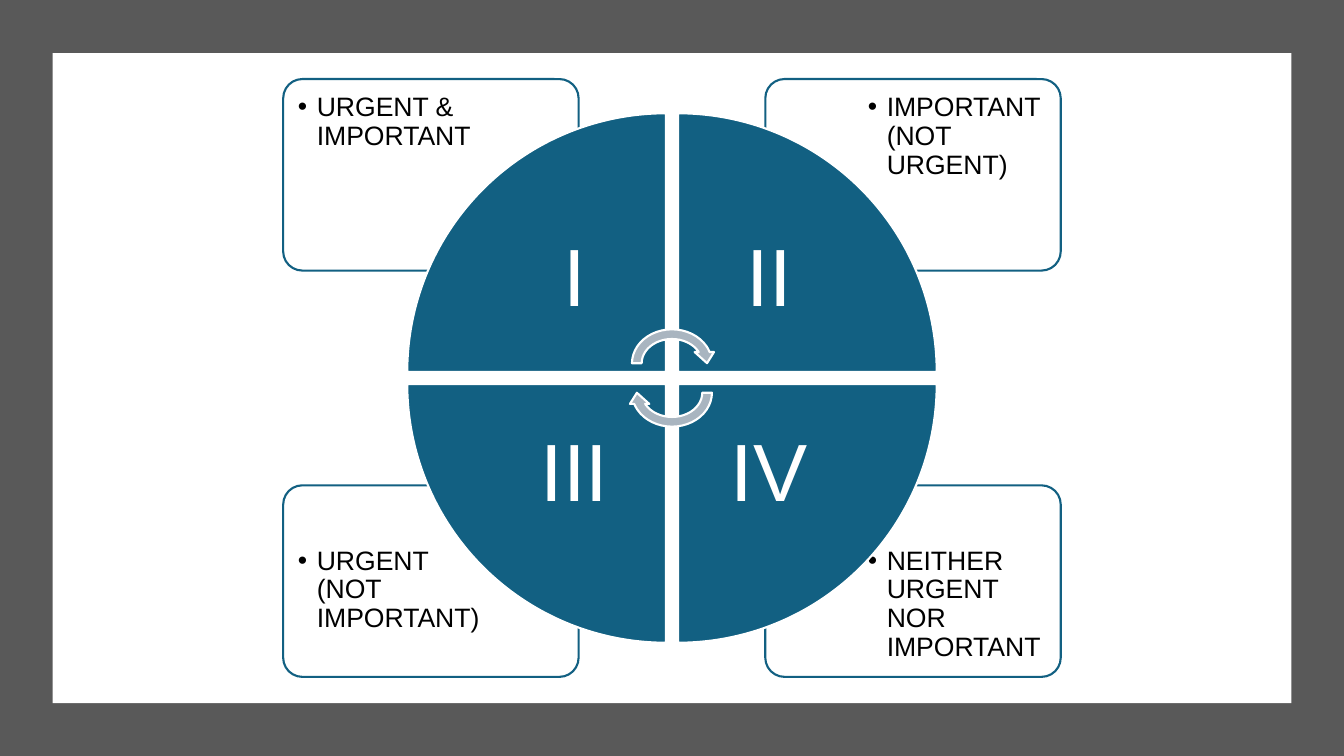
from dataclasses import dataclass

from lxml.etree import SubElement
from pptx import Presentation
from pptx.dml.color import RGBColor
from pptx.enum.shapes import MSO_SHAPE
from pptx.enum.text import MSO_ANCHOR, MSO_AUTO_SIZE, PP_ALIGN
from pptx.oxml.ns import qn
from pptx.shapes.autoshape import Shape
from pptx.slide import Slide
from pptx.text.text import TextFrame
from pptx.util import Pt

GREY = RGBColor(0x59, 0x59, 0x59)
WHITE = RGBColor(0xFF, 0xFF, 0xFF)
BLACK = RGBColor(0x00, 0x00, 0x00)
TEAL = RGBColor(0x12, 0x60, 0x82)
SILVER = RGBColor(0xA9, 0xB5, 0xC0)

FONT = "Arial"
WIDE, HIGH = 960, 540
MID_X, MID_Y = WIDE / 2, HIGH / 2
CARD_W, CARD_H = 211, 136.8
CARD_X, CARD_Y = 277.7, 213.5  # outer card edges, from the centre
NOTE_H = 96.5
WEDGE, GAP = 184.8, 4.3
LABEL = 130.4
ARROW_W, ARROW_H, ARROW_Y = 64, 55.4, 10.5


@dataclass(frozen=True)
class Box:
    left: float
    top: float
    width: float
    height: float


@dataclass(frozen=True)
class Quad:
    """One quadrant; col and row are 0 or 1, turn is in degrees."""
    label: str
    note: str
    col: int
    row: int
    turn: int
    note_x: float
    note_w: float

    def place(self, width: float, height: float, far_x: float, far_y: float) -> Box:
        """Box whose outer edges lie far_x and far_y from the centre."""
        left = MID_X + far_x - width if self.col else MID_X - far_x
        top = MID_Y + far_y - height if self.row else MID_Y - far_y
        return Box(left, top, width, height)


QUADS = [
    Quad("IV", "NEITHER URGENT NOR IMPORTANT", 1, 1, 180, 612.7, 141.8),
    Quad("III", "URGENT (NOT IMPORTANT)", 0, 1, 270, 205.6, 149),
    Quad("II", "IMPORTANT (NOT URGENT)", 1, 0, 90, 612.7, 141.8),
    Quad("I", "URGENT & IMPORTANT", 0, 0, 0, 205.6, 141.8),
]


def move(shape: Shape, box: Box) -> None:
    shape.left, shape.top = Pt(box.left), Pt(box.top)
    shape.width, shape.height = Pt(box.width), Pt(box.height)


def draw(slide: Slide, kind: MSO_SHAPE, box: Box, fill: RGBColor,
         line: RGBColor | None = None, turn: float = 0) -> Shape:
    shape = slide.shapes.add_shape(kind, Pt(box.left), Pt(box.top),
                                   Pt(box.width), Pt(box.height))
    shape.shadow.inherit = False
    shape.rotation = turn
    shape.fill.solid()
    shape.fill.fore_color.rgb = fill
    if line is None:
        shape.line.fill.background()
    else:
        shape.line.color.rgb = line
        shape.line.width = Pt(1.5)
    return shape


def write(frame: TextFrame, text: str, size: float, color: RGBColor,
          inset: float, anchor: MSO_ANCHOR, bullet: bool = False) -> None:
    frame.word_wrap = True
    frame.auto_size = MSO_AUTO_SIZE.NONE
    frame.vertical_anchor = anchor
    frame.margin_left = frame.margin_right = Pt(inset)
    frame.margin_top = frame.margin_bottom = Pt(inset)
    frame.text = text
    para = frame.paragraphs[0]
    para.alignment = PP_ALIGN.LEFT if bullet else PP_ALIGN.CENTER
    para.line_spacing = 0.9
    para.space_before = para.space_after = Pt(0)
    if bullet:
        props = para._p.get_or_add_pPr()
        props.set("marL", str(Pt(13.5)))
        props.set("indent", str(Pt(-13.5)))
        tint = SubElement(props, qn("a:buClr"))
        SubElement(tint, qn("a:srgbClr"), val=str(color))
        SubElement(props, qn("a:buFont"), typeface=FONT)
        SubElement(props, qn("a:buChar"), char="•")
    para.font.name = FONT
    para.font.size = Pt(size)
    para.font.bold = False
    para.font.color.rgb = color


def draw_card(slide: Slide, quad: Quad, holder: Shape) -> None:
    box = quad.place(CARD_W, CARD_H, CARD_X, CARD_Y)
    card = draw(slide, MSO_SHAPE.ROUNDED_RECTANGLE, box, WHITE, TEAL)
    card.adjustments[0] = 0.1
    tint = card._element.spPr.find(qn("a:solidFill"))[0]
    SubElement(tint, qn("a:alpha"), val="90000")
    slide.shapes._spTree.append(holder._element)  # list goes above its card
    top = 383.7 if quad.row else 59.9
    move(holder, Box(quad.note_x, top, quad.note_w, NOTE_H))
    write(holder.text_frame, quad.note, 19, BLACK, 7.2, MSO_ANCHOR.TOP, True)


def draw_wedge(slide: Slide, quad: Quad) -> None:
    far = WEDGE + GAP
    draw(slide, MSO_SHAPE.PIE_WEDGE, quad.place(WEDGE, WEDGE, far, far),
         TEAL, WHITE, quad.turn)
    far = LABEL + GAP
    box = quad.place(LABEL, LABEL, far, far)
    label = slide.shapes.add_textbox(Pt(box.left), Pt(box.top),
                                     Pt(box.width), Pt(box.height))
    write(label.text_frame, quad.label, 58, WHITE, 32.4, MSO_ANCHOR.MIDDLE)


def main() -> None:
    deck = Presentation()
    deck.slide_width, deck.slide_height = Pt(WIDE), Pt(HIGH)
    slide = deck.slides.add_slide(deck.slide_layouts.get_by_name("Comparison"))
    title, *holders = slide.placeholders
    title._element.getparent().remove(title._element)

    draw(slide, MSO_SHAPE.RECTANGLE, Box(0, 0, WIDE, HIGH), GREY)
    draw(slide, MSO_SHAPE.RECTANGLE, Box(37.6, 37.9, 884.8, 464.3), WHITE)
    for quad, holder in zip(QUADS, holders):
        draw_card(slide, quad, holder)
    for quad in reversed(QUADS):
        draw_wedge(slide, quad)
    for side, turn in ((-1, 0), (1, 180)):
        top = MID_Y + side * ARROW_Y - ARROW_H / 2
        box = Box(MID_X - ARROW_W / 2, top, ARROW_W, ARROW_H)
        draw(slide, MSO_SHAPE.CIRCULAR_ARROW, box, SILVER, WHITE, turn)
    deck.save("out.pptx")


if __name__ == "__main__":
    main()
